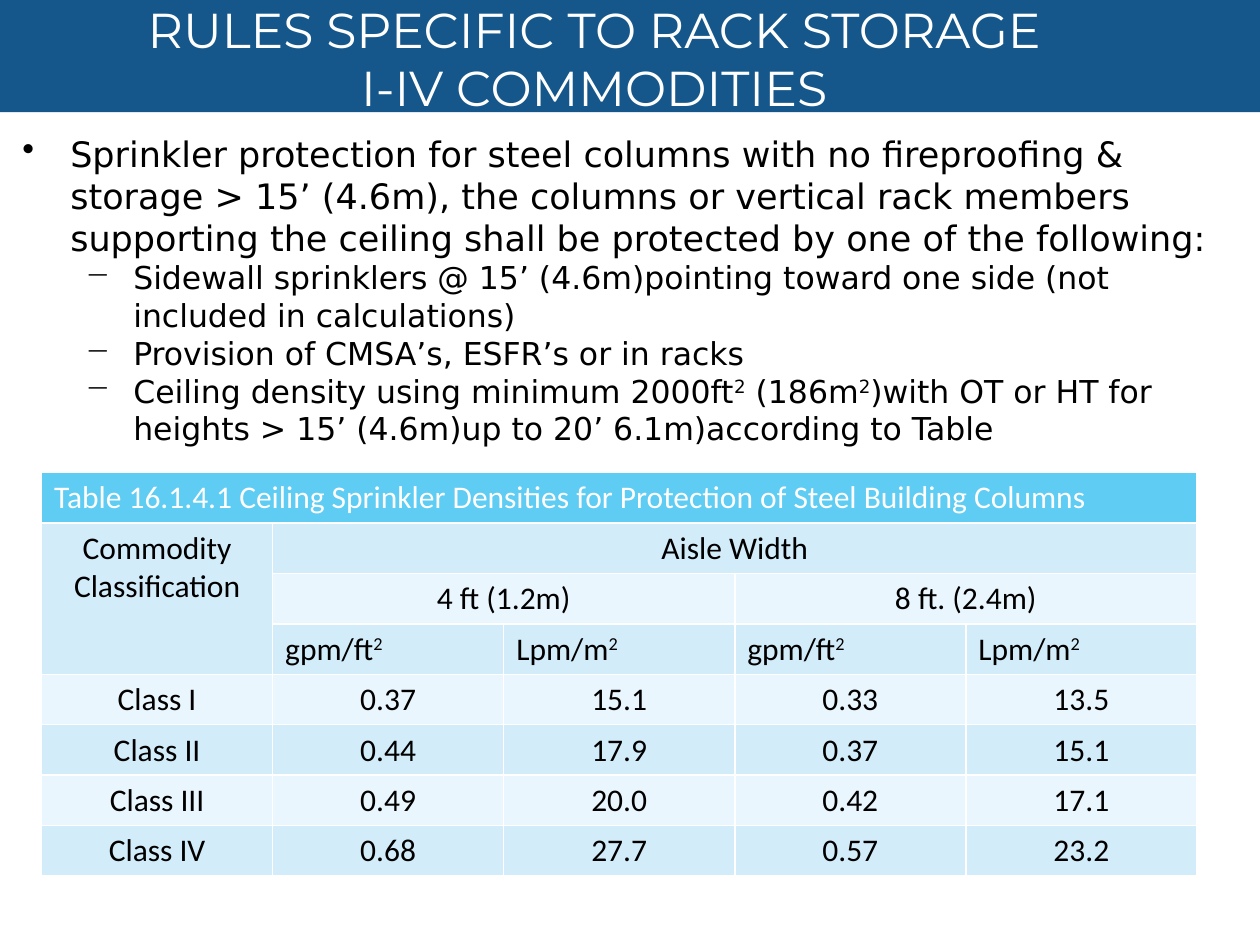
from lxml import etree
from pptx import Presentation
from pptx.dml.color import RGBColor
from pptx.enum.shapes import MSO_SHAPE
from pptx.enum.text import MSO_ANCHOR, MSO_AUTO_SIZE, PP_ALIGN
from pptx.oxml.ns import qn
from pptx.util import Inches, Pt

RECTANGLE = MSO_SHAPE.RECTANGLE
MIDDLE = MSO_ANCHOR.MIDDLE
FIT_SHAPE = MSO_AUTO_SIZE.SHAPE_TO_FIT_TEXT
NO_FIT = MSO_AUTO_SIZE.NONE
LEFT, CENTER = PP_ALIGN.LEFT, PP_ALIGN.CENTER

BLACK = RGBColor(0x00, 0x00, 0x00)
WHITE = RGBColor(0xFF, 0xFF, 0xFF)
BANNER_BLUE = RGBColor(0x15, 0x57, 0x8A)
HEADER_BLUE = RGBColor(0x5E, 0xCC, 0xF3)
DARK_BAND = RGBColor(0xD2, 0xEC, 0xFA)
LIGHT_BAND = RGBColor(0xEA, 0xF6, 0xFD)

TITLE_LINES = ["RULES SPECIFIC TO RACK STORAGE", "I-IV COMMODITIES"]

# Text between two ^ marks is superscript.
RULES = [
    (0, "Sprinkler protection for steel columns with no fireproofing & storage > 15’ (4.6m), "
        "the columns or vertical rack members supporting the ceiling shall be protected "
        "by one of the following:"),
    (1, "Sidewall sprinklers @ 15’ (4.6m)pointing toward one side (not included in calculations)"),
    (1, "Provision of CMSA’s, ESFR’s or in racks"),
    (1, "Ceiling density using minimum 2000ft^2^ (186m^2^)with OT or HT for heights "
        "> 15’ (4.6m)up to 20’ 6.1m)according to Table"),
]
# Bullet, indent in inches and text size for each level
LEVELS = [("•", 0.38, 20), ("−", 0.88, 18)]
HANGING = 0.38

UNITS_ROW = 3
DENSITY_ROWS = [
    ["Table 16.1.4.1 Ceiling Sprinkler Densities for Protection of Steel Building Columns",
     "", "", "", ""],
    ["Commodity Classification", "Aisle Width", "", "", ""],
    ["", "4 ft (1.2m)", "", "8 ft. (2.4m)", ""],
    ["", "gpm/ft^2^", "Lpm/m^2^", "gpm/ft^2^", "Lpm/m^2^"],
    ["Class I", "0.37", "15.1", "0.33", "13.5"],
    ["Class II", "0.44", "17.9", "0.37", "15.1"],
    ["Class III", "0.49", "20.0", "0.42", "17.1"],
    ["Class IV", "0.68", "27.7", "0.57", "23.2"],
]
# First and last cell of each merged area
MERGES = [((0, 0), (0, 4)), ((1, 0), (3, 0)), ((1, 1), (1, 4)),
          ((2, 1), (2, 2)), ((2, 3), (2, 4))]


def add_runs(paragraph, text, font_name, size, color):
    """Add text run by run, raising the parts between ^ marks."""
    for index, piece in enumerate(text.split("^")):
        if not piece:
            continue
        run = paragraph.add_run()
        run.text = piece
        run.font.name = font_name
        run.font.size = Pt(size)
        run.font.bold = False
        run.font.color.rgb = color
        if index % 2:
            run.font._element.set("baseline", "30000")


def add_bullet(paragraph, character, indent):
    properties = paragraph._p.get_or_add_pPr()
    properties.set("marL", str(Inches(indent)))
    properties.set("indent", str(-Inches(HANGING)))
    etree.SubElement(properties, qn("a:buChar")).set("char", character)


def add_banner(slide, left, top, width, height):
    banner = slide.shapes.add_shape(RECTANGLE, left, top, width, height)
    banner.shadow.inherit = False
    banner.fill.solid()
    banner.fill.fore_color.rgb = BANNER_BLUE
    banner.line.fill.background()
    # The banner lies behind the title
    slide.shapes.title.element.addprevious(banner.element)


def format_title(slide, left, top, width, height):
    title = slide.shapes.title
    title.left, title.top, title.width, title.height = left, top, width, height
    frame = title.text_frame
    frame.word_wrap = True
    frame.auto_size = NO_FIT
    frame.vertical_anchor = MIDDLE
    paragraph = frame.paragraphs[0]
    paragraph.alignment = CENTER
    for index, line in enumerate(TITLE_LINES):
        if index:
            paragraph.add_line_break()
        add_runs(paragraph, line, "Montserrat", 28, WHITE)


def add_rules(slide, left, top, width, height):
    frame = slide.shapes.add_textbox(left, top, width, height).text_frame
    frame.word_wrap = True
    frame.auto_size = FIT_SHAPE
    for index, (level, text) in enumerate(RULES):
        paragraph = frame.add_paragraph() if index else frame.paragraphs[0]
        character, indent, size = LEVELS[level]
        paragraph.level = level
        add_bullet(paragraph, character, indent)
        add_runs(paragraph, text, "DejaVu Sans", size, BLACK)


def add_borders(cell):
    properties = cell._tc.get_or_add_tcPr()
    for side in ("lnL", "lnR", "lnT", "lnB"):
        line = etree.SubElement(properties, qn(f"a:{side}"), w=str(Pt(1)))
        fill = etree.SubElement(line, qn("a:solidFill"))
        etree.SubElement(fill, qn("a:srgbClr"), val=str(WHITE))


def add_density_table(slide, left, top, width, height):
    row_count, column_count = len(DENSITY_ROWS), len(DENSITY_ROWS[0])
    table = slide.shapes.add_table(row_count, column_count, left, top, width, height).table
    table.horz_banding = False
    for row, texts in enumerate(DENSITY_ROWS):
        if row == 0:
            fill_color = HEADER_BLUE
        else:
            fill_color = DARK_BAND if row % 2 else LIGHT_BAND
        for column, text in enumerate(texts):
            cell = table.cell(row, column)
            add_borders(cell)
            cell.fill.solid()
            cell.fill.fore_color.rgb = fill_color
            paragraph = cell.text_frame.paragraphs[0]
            paragraph.alignment = LEFT if row in (0, UNITS_ROW) else CENTER
            paragraph.font.size = Pt(18)
            add_runs(paragraph, text, "Calibri", 18, BLACK if row else WHITE)
    for first, last in MERGES:
        table.cell(*first).merge(table.cell(*last))


def main():
    presentation = Presentation()
    presentation.slide_width = Inches(10)
    presentation.slide_height = Inches(7.5)
    title_only = presentation.slide_layouts[5]
    slide = presentation.slides.add_slide(title_only)
    add_banner(slide, 0, 0, presentation.slide_width, Inches(0.89))
    format_title(slide, Inches(0.7), Inches(-0.08), Inches(8.03), Inches(1.08))
    add_rules(slide, Inches(0.08), Inches(1), Inches(9.67), Inches(2.63))
    add_density_table(slide, Inches(0.33), Inches(3.75), Inches(9.17), Inches(2.86))
    presentation.save("out.pptx")


if __name__ == "__main__":
    main()
